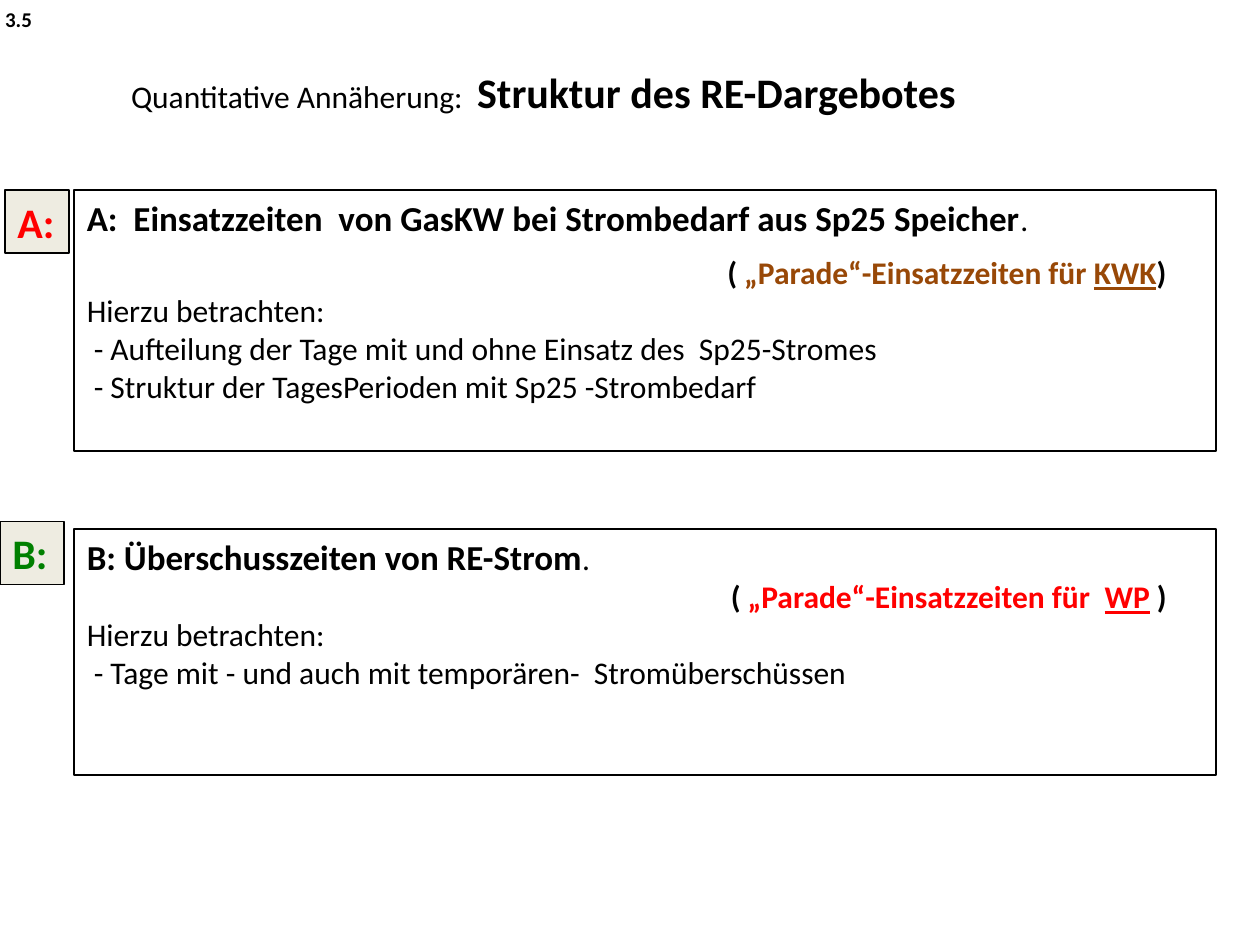
from pptx import Presentation
from pptx.dml.color import RGBColor
from pptx.enum.text import MSO_ANCHOR, MSO_AUTO_SIZE, PP_ALIGN
from pptx.util import Pt

TOP = MSO_ANCHOR.TOP
FIXED = MSO_AUTO_SIZE.NONE
LEFT = PP_ALIGN.LEFT
RECT = 1
TITLE_ONLY = 5

BLACK = RGBColor(0, 0, 0)
RED = RGBColor(255, 0, 0)
GREEN = RGBColor(0, 128, 0)
BROWN = RGBColor(0x98, 0x48, 0x07)
CREAM = RGBColor(0xEE, 0xEC, 0xE1)

# A run is (text, size, bold, colour, underline); a line is (indent, space before, runs).
TITLE = [(0, 0, [("Quantitative Annäherung:  ", 18, False, BLACK, False),
                 ("Struktur des RE-Dargebotes", 24, True, BLACK, False)])]
NUMBER = [(0, 0, [("3.5", 12, True, BLACK, False)])]


def head(text):
    return 0, 0, [(text, 20, True, BLACK, False), (".", 18, False, BLACK, False)]


def plain(text, indent=0):
    return indent, 0, [(text, 18, False, BLACK, False)]


def parade(text, key, end, color, indent, gap):
    return indent, gap, [("( ", 18, True, BLACK, False), (text, 18, True, color, False),
                         (key, 18, True, color, True), (end, 18, True, BLACK, False)]


PANELS = [
    ((42.5, 108.7, 652.5, 149), [
        head("A:  Einsatzzeiten  von GasKW bei Strombedarf aus Sp25 Speicher"),
        parade("„Parade“-Einsatzzeiten für ", "KWK", ")", BROWN, 366, 8.5),
        plain("Hierzu betrachten:"),
        plain("- Aufteilung der Tage mit und ohne Einsatz des  Sp25-Stromes", 4),
        plain("- Struktur der TagesPerioden mit Sp25 -Strombedarf", 4),
    ]),
    ((42.5, 302.4, 652.5, 140.4), [
        head("B: Überschusszeiten von RE-Strom"),
        parade("„Parade“-Einsatzzeiten für  ", "WP", " )", RED, 368, 0),
        plain("Hierzu betrachten:"),
        plain("- Tage mit - und auch mit temporären-  Stromüberschüssen", 4),
    ]),
]
TAGS = [((2.9, 108.7, 36.7, 36), "A:", RED), ((0, 298, 36.7, 36), "B:", GREEN)]


def write(shape, lines):
    frame = shape.text_frame
    frame.word_wrap = True
    frame.auto_size = FIXED
    frame.vertical_anchor = TOP
    for i, (indent, gap, runs) in enumerate(lines):
        par = frame.add_paragraph() if i else frame.paragraphs[0]
        par.alignment = LEFT
        par.space_before = Pt(gap)
        props = par._p.get_or_add_pPr()
        props.set("marL", str(Pt(indent)))
        props.set("indent", "0")
        for text, size, bold, color, under in runs:
            run = par.add_run()
            run.text = text
            font = run.font
            font.name = "Calibri"
            font.size = Pt(size)
            font.bold = bold
            font.underline = under
            font.color.rgb = color


def add_box(slide, place, lines, fill=None):
    box = slide.shapes.add_shape(RECT, *map(Pt, place))
    box.shadow.inherit = False
    box.line.color.rgb = BLACK
    box.line.width = Pt(1)
    if fill is None:
        box.fill.background()
    else:
        box.fill.solid()
        box.fill.fore_color.rgb = fill
    write(box, lines)


def main():
    deck = Presentation()
    deck.slide_width, deck.slide_height = Pt(720), Pt(540)
    slide = deck.slides.add_slide(deck.slide_layouts[TITLE_ONLY])

    title = slide.shapes.title
    title.left, title.top, title.width, title.height = map(Pt, (67.7, 34.6, 584, 36))
    write(title, TITLE)

    for place, lines in PANELS:
        add_box(slide, place, lines)
    for place, text, color in TAGS:
        add_box(slide, place, [(0, 0, [(text, 24, True, color, False)])], CREAM)

    note = slide.shapes.add_textbox(*map(Pt, (2.9, 3.6, 25.2, 14.4)))
    frame = note.text_frame
    frame.margin_left = frame.margin_right = frame.margin_top = frame.margin_bottom = 0
    write(note, NUMBER)

    deck.save("out.pptx")


if __name__ == "__main__":
    main()
